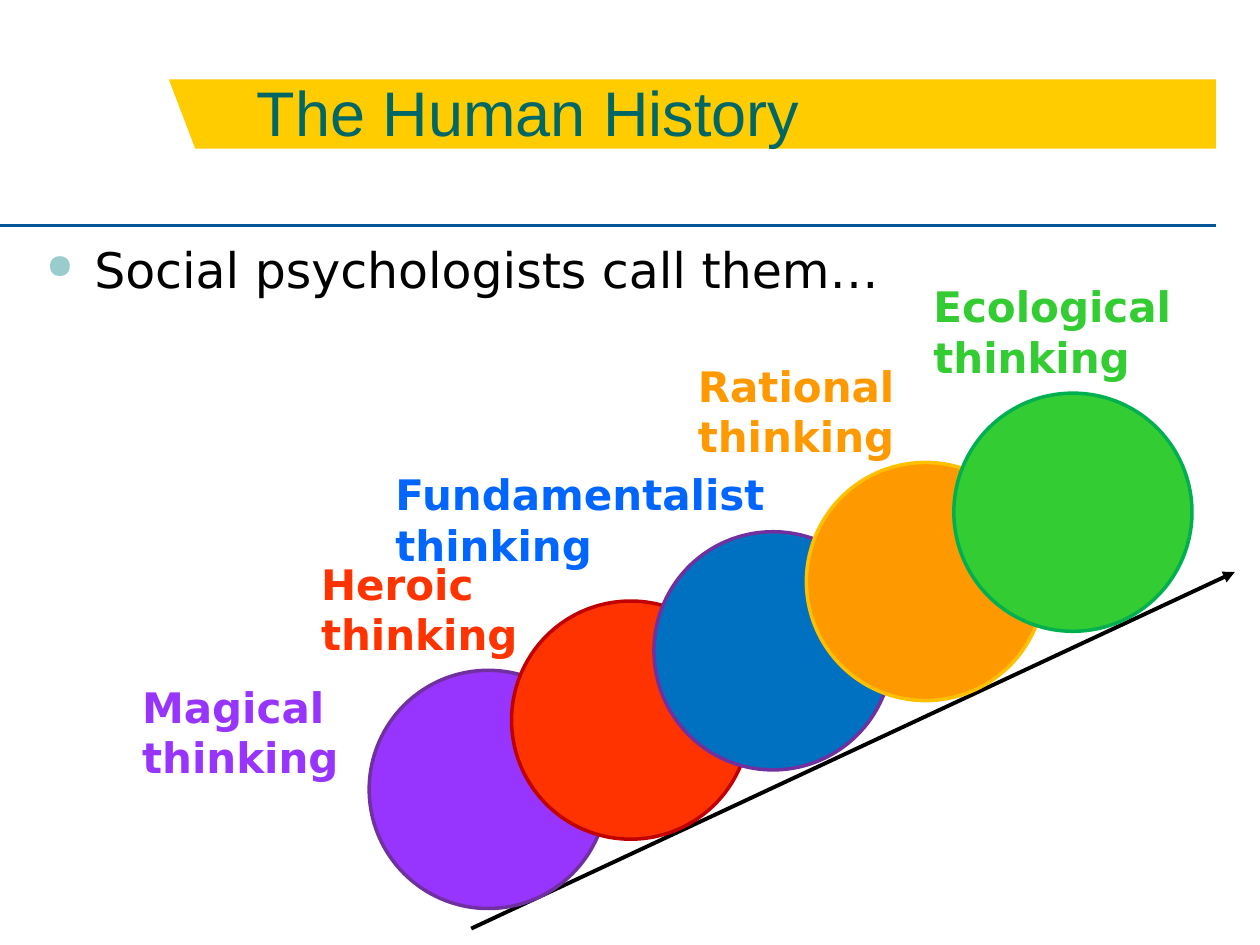
from lxml import etree
from pptx import Presentation
from pptx.dml.color import RGBColor
from pptx.enum.shapes import MSO_CONNECTOR, MSO_SHAPE
from pptx.enum.text import MSO_ANCHOR, MSO_AUTO_SIZE
from pptx.oxml.ns import qn
from pptx.util import Inches, Pt

STRAIGHT = MSO_CONNECTOR.STRAIGHT
RECTANGLE, OVAL = MSO_SHAPE.RECTANGLE, MSO_SHAPE.OVAL
BOTTOM, TOP = MSO_ANCHOR.BOTTOM, MSO_ANCHOR.TOP
FIT_SHAPE = MSO_AUTO_SIZE.SHAPE_TO_FIT_TEXT

BLACK = RGBColor(0x00, 0x00, 0x00)
NAVY = RGBColor(0x00, 0x56, 0x96)
YELLOW = RGBColor(0xFF, 0xCC, 0x00)
TEAL = RGBColor(0x00, 0x66, 0x66)
PURPLE = RGBColor(0x97, 0x35, 0xFF)
DARK_PURPLE = RGBColor(0x70, 0x30, 0xA0)
RED = RGBColor(0xFF, 0x33, 0x00)
DARK_RED = RGBColor(0xC0, 0x00, 0x00)
BLUE = RGBColor(0x00, 0x70, 0xC0)
BRIGHT_BLUE = RGBColor(0x00, 0x66, 0xFF)
ORANGE = RGBColor(0xFF, 0x99, 0x00)
AMBER = RGBColor(0xFF, 0xC0, 0x00)
GREEN = RGBColor(0x33, 0xCC, 0x33)
DARK_GREEN = RGBColor(0x00, 0xB0, 0x50)
BULLET_COLOR = "99CCCC"

DIAMETER = 1.89
FIRST_TOP, RISE = 5.32, 0.55
STAGES = [
    ("Magical", 2.93, PURPLE, DARK_PURPLE, (1.03, 5.36, 1.77), PURPLE),
    ("Heroic", 4.06, RED, DARK_RED, (2.45, 4.38, 1.77), RED),
    ("Fundamentalist", 5.19, BLUE, DARK_PURPLE, (3.04, 3.67, 3.14), BRIGHT_BLUE),
    ("Rational", 6.4, ORANGE, AMBER, (5.44, 2.81, 1.77), ORANGE),
    ("Ecological", 7.57, GREEN, DARK_GREEN, (7.31, 2.18, 2.1), GREEN),
]


def style_shape(sp, fill, line=None):
    sp.shadow.inherit = False
    sp.fill.solid()
    sp.fill.fore_color.rgb = fill
    if line is None:
        sp.line.fill.background()
    else:
        sp.line.color.rgb = line
        sp.line.width = Pt(2)


def add_shape(s, kind, left, top, width, height, fill, line=None):
    sp = s.shapes.add_shape(kind, Inches(left), Inches(top), Inches(width), Inches(height))
    style_shape(sp, fill, line)


def add_line(s, start, end, color, arrow=False):
    sp = s.shapes.add_connector(STRAIGHT, *map(Inches, start + end))
    sp.line.color.rgb = color
    sp.line.width = Pt(2.25)
    if arrow:
        etree.SubElement(sp.line._get_or_add_ln(), qn("a:tailEnd"), type="triangle")
    etree.SubElement(sp._element.spPr, qn("a:effectLst"))


def add_text(s, text, left, top, width, height, font, size, color,
             bold=False, wrap=True, anchor=TOP):
    sp = s.shapes.add_textbox(Inches(left), Inches(top), Inches(width), Inches(height))
    tf = sp.text_frame
    tf.text = text
    tf.word_wrap = wrap
    tf.vertical_anchor = anchor
    for r in tf.paragraphs[0].runs:
        r.font.name = font
        r.font.size = Pt(size)
        r.font.bold = bold
        r.font.color.rgb = color
    return tf


def add_bullet(p):
    pPr = p._p.get_or_add_pPr()
    pPr.set("marL", str(Inches(0.38)))
    pPr.set("indent", str(-Inches(0.38)))
    color = etree.SubElement(pPr, qn("a:buClr"))
    etree.SubElement(color, qn("a:srgbClr"), val=BULLET_COLOR)
    etree.SubElement(pPr, qn("a:buSzPct"), val="70000")
    etree.SubElement(pPr, qn("a:buChar"), char="●")


def add_banner(s):
    add_line(s, (0, 1.79), (9.65, 1.79), NAVY)
    corners = [(1.34, 0.63), (1.77, 0.63), (1.77, 1.18), (1.55, 1.18)]
    points = [(Inches(x), Inches(y)) for x, y in corners]
    builder = s.shapes.build_freeform(*points[0])
    builder.add_line_segments(points[1:], close=True)
    style_shape(builder.convert_to_shape(), YELLOW)
    add_shape(s, RECTANGLE, 1.77, 0.63, 7.88, 0.55, YELLOW)
    add_text(s, "The Human History", 1.94, 0.33, 7.56, 0.9, "Arial", 36, TEAL, anchor=BOTTOM)


def add_stages(s):
    for i, (_, left, fill, line, _, _) in enumerate(STAGES):
        add_shape(s, OVAL, left, FIRST_TOP - i * RISE, DIAMETER, DIAMETER, fill, line)
    for name, _, _, _, (left, top, width), color in STAGES:
        tf = add_text(s, f"{name}\vthinking", left, top, width, 0.91,
                      "DejaVu Sans", 24, color, bold=True, wrap=False)
        tf.auto_size = FIT_SHAPE


def main():
    prs = Presentation()
    prs.slide_width, prs.slide_height = Inches(10), Inches(7.5)
    s = prs.slides.add_slide(prs.slide_layouts[6])
    add_banner(s)
    tf = add_text(s, "Social psychologists call them…", 0.27, 1.85, 9.37, 0.8,
                  "DejaVu Sans", 28, BLACK)
    add_bullet(tf.paragraphs[0])
    add_line(s, (3.74, 7.37), (9.8, 4.54), BLACK, arrow=True)
    add_stages(s)
    prs.save("out.pptx")


if __name__ == "__main__":
    main()
